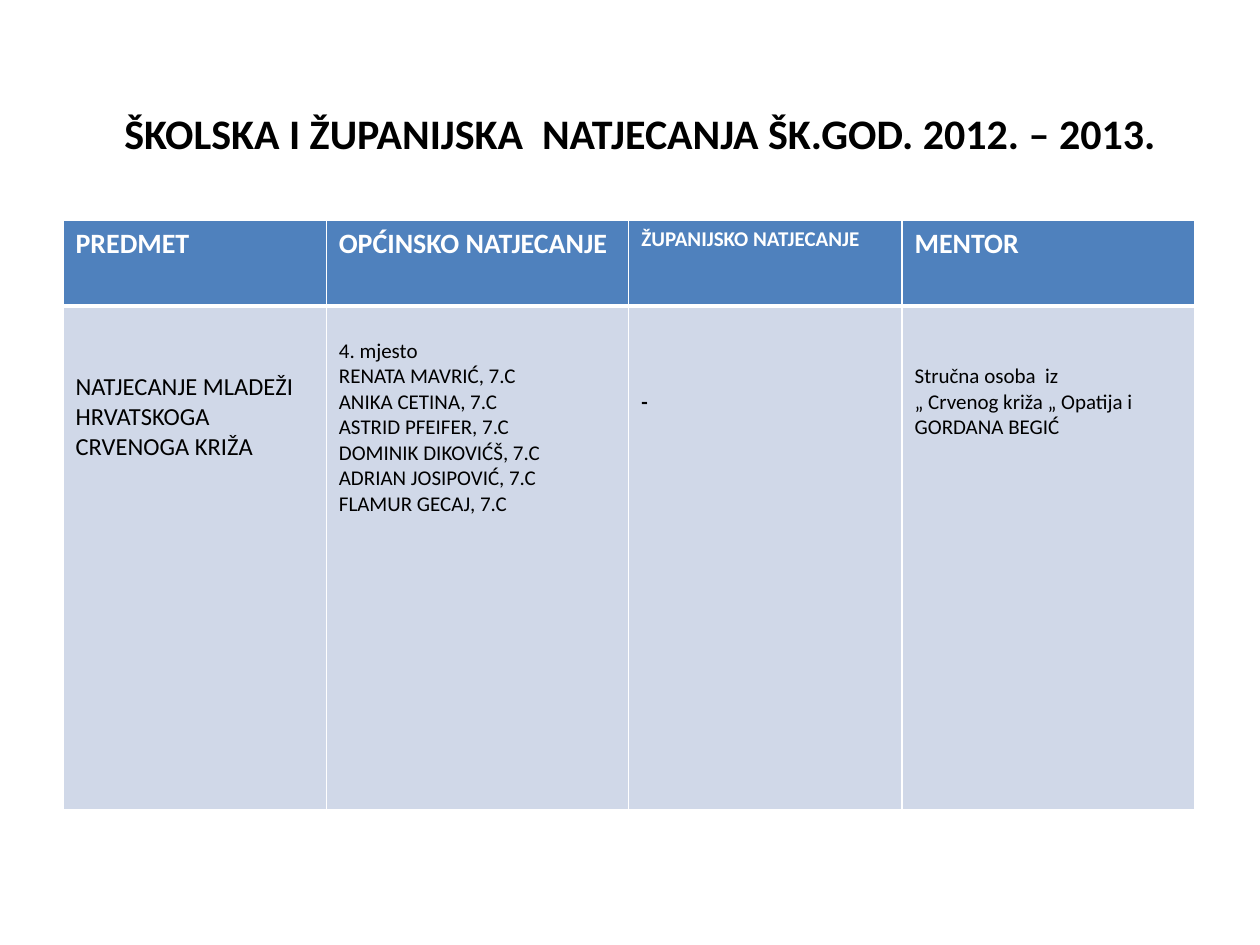
from dataclasses import dataclass

from lxml import etree
from pptx import Presentation, util as u
from pptx.dml.color import RGBColor
from pptx.enum import text
from pptx.oxml import ns

COLORS = {"ink": "000000", "paper": "FFFFFF", "header": "4F81BD", "body": "D0D8E8"}
FONT = "Calibri"
LINE_HEIGHT = 1.22  # line pitch as a share of the text size
SLIDE_W, SLIDE_H = 10, 7.5
COLUMNS = (2.09, 2.4, 2.17, 2.32)
ROWS = (0.68, 4)


@dataclass
class Entry:
    lines: tuple[str, ...]
    size: float
    lines_above: int = 0
    bold: bool = False


HEADINGS = (
    Entry(("PREDMET",), 16, bold=True),
    Entry(("OPĆINSKO NATJECANJE",), 16, bold=True),
    Entry(("ŽUPANIJSKO NATJECANJE",), 12, bold=True),
    Entry(("MENTOR",), 16, bold=True),
)
COMPETITION = (
    Entry(("NATJECANJE MLADEŽI HRVATSKOGA CRVENOGA KRIŽA",), 14, 2),
    Entry(("4. mjesto", "RENATA MAVRIĆ, 7.C", "ANIKA CETINA, 7.C",
           "ASTRID PFEIFER, 7.C", "DOMINIK DIKOVIĆŠ, 7.C",
           "ADRIAN JOSIPOVIĆ, 7.C", "FLAMUR GECAJ, 7.C"), 12, 1),
    Entry(("-",), 12, 3, bold=True),
    Entry(("Stručna osoba  iz", "„ Crvenog križa „ Opatija i", "GORDANA BEGIĆ"), 12, 2),
)


def set_all(target, values: dict) -> None:
    for name, value in values.items():
        setattr(target, name, value)


def write(frame, entry: Entry, color: str, align=text.PP_ALIGN.LEFT) -> None:
    for index, line in enumerate(entry.lines):
        paragraph = frame.add_paragraph() if index else frame.paragraphs[0]
        paragraph.alignment = align
        run = paragraph.add_run()
        run.text = line
        set_all(run.font, {"name": FONT, "size": u.Pt(entry.size), "bold": entry.bold})
        run.font.color.rgb = RGBColor.from_string(COLORS[color])


def add_borders(cell, widths: dict[str, float]) -> None:
    properties = cell._tc.get_or_add_tcPr()
    for index, (side, width) in enumerate(widths.items()):
        line = etree.Element(ns.qn(f"a:ln{side}"), w=str(u.Pt(width)))
        fill = etree.SubElement(line, ns.qn("a:solidFill"))
        etree.SubElement(fill, ns.qn("a:srgbClr"), val=COLORS["paper"])
        properties.insert(index, line)


def fill_cell(cell, entry: Entry, fill: str, color: str, borders: dict[str, float]) -> None:
    cell.fill.solid()
    cell.fill.fore_color.rgb = RGBColor.from_string(COLORS[fill])
    cell.margin_top = u.Inches(0.05 + entry.lines_above * entry.size * LINE_HEIGHT / 72)
    write(cell.text_frame, entry, color)
    add_borders(cell, borders)


def main() -> None:
    deck = Presentation()
    set_all(deck, {"slide_width": u.Inches(SLIDE_W), "slide_height": u.Inches(SLIDE_H)})
    slide = deck.slides.add_slide(deck.slide_layouts[6])

    # Title, set slightly right of and below the middle of its box
    title = slide.shapes.add_textbox(
        u.Inches(0.51), u.Inches(0.29), u.Inches(SLIDE_W * 0.9), u.Inches(SLIDE_H / 6))
    set_all(title.text_frame, {
        "word_wrap": True, "vertical_anchor": text.MSO_ANCHOR.MIDDLE,
        "margin_left": u.Inches(0.24), "margin_top": u.Inches(0.33)})
    write(title.text_frame,
          Entry(("ŠKOLSKA I ŽUPANIJSKA  NATJECANJA ŠK.GOD. 2012. – 2013.",), 24, bold=True),
          "ink", text.PP_ALIGN.CENTER)

    # Competition table
    table = slide.shapes.add_table(
        len(ROWS), len(COLUMNS), u.Inches(SLIDE_W * 0.05), u.Inches(1.75),
        u.Inches(sum(COLUMNS)), u.Inches(sum(ROWS))).table
    for column, width in zip(table.columns, COLUMNS):
        column.width = u.Inches(width)
    for row, height in zip(table.rows, ROWS):
        row.height = u.Inches(height)

    for index in range(len(COLUMNS)):
        fill_cell(table.cell(0, index), HEADINGS[index], "header", "paper",
                  {"L": 1, "R": 1, "T": 1, "B": 3})
        fill_cell(table.cell(1, index), COMPETITION[index], "body", "ink",
                  {"L": 1, "R": 1, "T": 3, "B": 1})

    deck.save("out.pptx")


if __name__ == "__main__":
    main()
